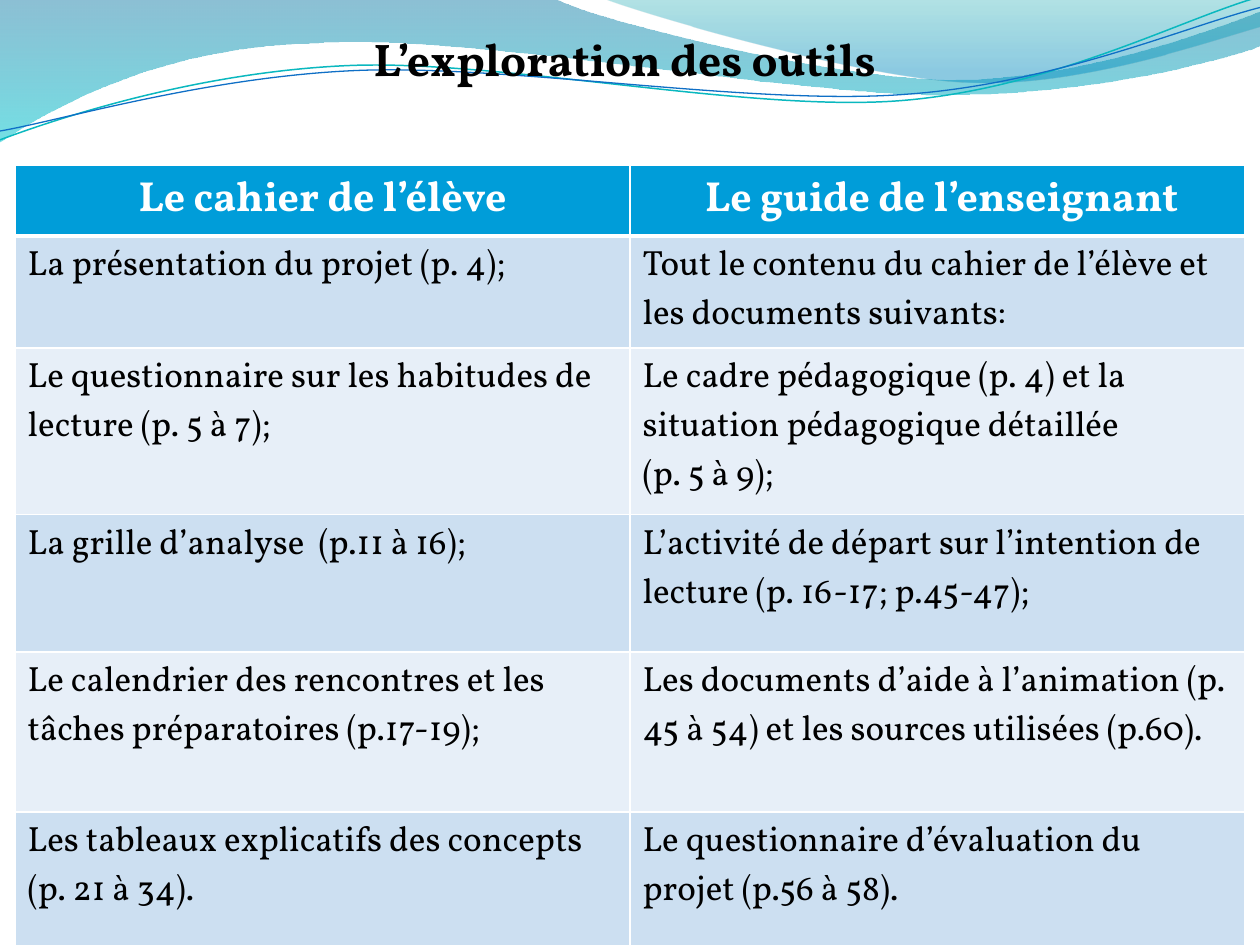
import math

from lxml import etree
from pptx import Presentation
from pptx.dml.color import RGBColor
from pptx.enum import text
from pptx.oxml import ns
from pptx.util import Inches, Pt

FONT = "Vollkorn"
BLACK = RGBColor(0, 0, 0)
WHITE = RGBColor(0xFF, 0xFF, 0xFF)
HEAD = RGBColor(0x00, 0x9D, 0xD9)
BANDS = [RGBColor(0xE7, 0xEF, 0xF8), RGBColor(0xCC, 0xDF, 0xF1)]
BLUE = RGBColor(0x00, 0x74, 0xA1)
AQUA = RGBColor(0x00, 0xC6, 0xCF)
TEAL = RGBColor(0x00, 0xA1, 0xA9)
SKY = RGBColor(0x00, 0x8B, 0xBF)
CYAN = RGBColor(0x0A, 0xB8, 0xBF)
NAVY = RGBColor(0x0F, 0x6F, 0xC6)
TILT = 2.7

prs = Presentation()
prs.slide_width, prs.slide_height = Inches(10), Inches(7.5)
slide = prs.slides.add_slide(prs.slide_layouts[5])


def wave(start, parts, close, mid=(0, 0), tilt=0):
    """Draw an outline; a part of 2 numbers is a line, of 6 a Bezier curve.

    The points are turned by tilt about mid, and the shape is turned back.
    """
    cos, sin = math.cos(math.radians(tilt)), math.sin(math.radians(tilt))
    flat = [*start, *(n for part in parts for n in part)]
    pts = []
    for x, y in zip(flat[::2], flat[1::2]):
        dx, dy = x - mid[0], y - mid[1]
        pts.append((Inches(mid[0] + dx * cos - dy * sin),
                    Inches(mid[1] + dx * sin + dy * cos)))
    pen = slide.shapes.build_freeform(*pts[0])
    pen.add_line_segments(pts[1:], close=close)
    shape = pen.convert_to_shape()
    shape.shadow.inherit = False
    shape.rotation = -tilt % 360
    steps = iter(list(shape._element.spPr.iter(ns.qn("a:lnTo"))))
    for part in parts:
        step = next(steps)
        if len(part) == 6:
            step.tag = ns.qn("a:cubicBezTo")
            for _ in range(2):
                extra = next(steps)
                step.append(extra[0])
                extra.getparent().remove(extra)
    return shape


# Translucent waves: start, parts, gradient stops (place, colour, alpha in %)
fills = [
    ((0, 0), [(4.4, -0.01), (4.76, 0.17, 6.64, 0.63, 7.58, 0.63),
              (8.53, 0.63, 9.58, 0.26, 10, 0.09), (10.01, 0.36),
              (9.83, 0.44, 8.7, 0.76, 7.46, 0.75),
              (6.22, 0.75, 3.82, 0.28, 2.57, 0.34),
              (1.29, 0.36, 0.46, 0.83, -0.01, 1.13)],
     [(0, BLUE, 45), (1, AQUA, 55)]),
    ((4.79, -0.01), [(5.09, 0.11, 6.82, 0.62, 7.69, 0.65),
                     (8.56, 0.69, 9.61, 0.32, 10, 0.21), (10, 0)],
     [(0, TEAL, 30), (0.8, SKY, 45)]),
]
for start, parts, stops in fills:
    shape = wave(start, parts, True)
    shape.line.fill.background()
    shape.fill.gradient()
    shape.fill.gradient_angle = 270
    for stop, (place, color, alpha) in zip(shape.fill.gradient_stops, stops):
        stop.position = place
        stop.color.rgb = color
    for tag, (_, _, alpha) in zip(shape._element.spPr.iter(ns.qn("a:srgbClr")), stops):
        etree.SubElement(tag, ns.qn("a:alpha"), val=str(alpha * 1000))

lines = [
    ((0, 1.11), [(0.48, 0.93, 1.58, 0.57, 2.77, 0.52),
                 (3.95, 0.47, 5.93, 0.89, 7.13, 0.8),
                 (8.33, 0.71, 9.38, 0.15, 9.98, -0.02)], (4.99, 0.58), CYAN, 0.85),
    ((0, 1.04), [(0.47, 0.96, 1.64, 0.61, 2.83, 0.56),
                 (4.03, 0.51, 5.97, 0.84, 7.17, 0.75),
                 (8.36, 0.67, 9.41, 0.21, 10, 0.06)], (5, 0.59), NAVY, 0.75),
]
for start, parts, mid, color, width in lines:
    shape = wave(start, parts, False, mid, TILT)
    shape.fill.background()
    shape.line.color.rgb = color
    shape.line.width = Pt(width)

# Title, in front of the waves
title = slide.shapes.title
slide.shapes._spTree.append(title._element)
title.left, title.top = Inches(1.3), Inches(0.21)
title.width, title.height = Inches(7.32), Inches(0.47)
frame = title.text_frame
frame.text = "L’exploration des outils"
frame.auto_size = text.MSO_AUTO_SIZE.NONE
frame.vertical_anchor = text.MSO_ANCHOR.BOTTOM
frame.margin_left = frame.margin_right = frame.margin_bottom = 0
frame.margin_top = Inches(0.05)
para = frame.paragraphs[0]
para.alignment = text.PP_ALIGN.CENTER
para.font.name, para.font.size, para.font.bold = FONT, Pt(26.1), True
para.font.color.rgb = BLACK

# Table of tools
rows = [
    (0.44, "Le cahier de l’élève", " Le guide de l’enseignant"),
    (0.89, "La présentation du projet (p. 4);",
     "Tout le contenu du cahier de l’élève et les documents suivants:"),
    (1.32, "Le questionnaire sur les habitudes de lecture (p. 5 à 7);",
     "Le cadre pédagogique (p. 4) et la situation pédagogique détaillée\n(p. 5 à 9);"),
    (1.09, "La grille d’analyse  (p.11 à 16);",
     "L’activité de départ sur l’intention de lecture (p. 16-17; p.45-47);"),
    (1.27, "Le calendrier des rencontres et les tâches préparatoires (p.17-19);",
     "Les documents d’aide à l’animation (p. 45 à 54) et les sources utilisées (p.60)."),
    (1.09, "Les tableaux explicatifs des concepts (p. 21 à 34).",
     "Le questionnaire d’évaluation du projet (p.56 à 58)."),
]
high = sum(row[0] for row in rows)
table = slide.shapes.add_table(len(rows), 2, Inches(0.12), Inches(1.31),
                               Inches(9.76), Inches(high)).table
for r, (tall, *words) in enumerate(rows):
    table.rows[r].height = Inches(tall)
    for c, word in enumerate(words):
        cell = table.cell(r, c)
        cell.text = word
        cell.fill.solid()
        cell.fill.fore_color.rgb = BANDS[r % 2] if r else HEAD
        for para in cell.text_frame.paragraphs:
            para.alignment = text.PP_ALIGN.LEFT if r else text.PP_ALIGN.CENTER
            para.font.name = FONT
            para.font.size = Pt(20 if r else 24)
            para.font.bold = r == 0
            para.font.color.rgb = BLACK if r else WHITE
        for i, side in enumerate("LRTB"):
            thick = (r, side) in ((0, "B"), (1, "T"))
            edge = etree.Element(ns.qn(f"a:ln{side}"), w=str(Pt(3 if thick else 1)))
            ink = etree.SubElement(edge, ns.qn("a:solidFill"))
            etree.SubElement(ink, ns.qn("a:srgbClr"), val=str(WHITE))
            cell._tc.get_or_add_tcPr().insert(i, edge)

prs.save("out.pptx")
